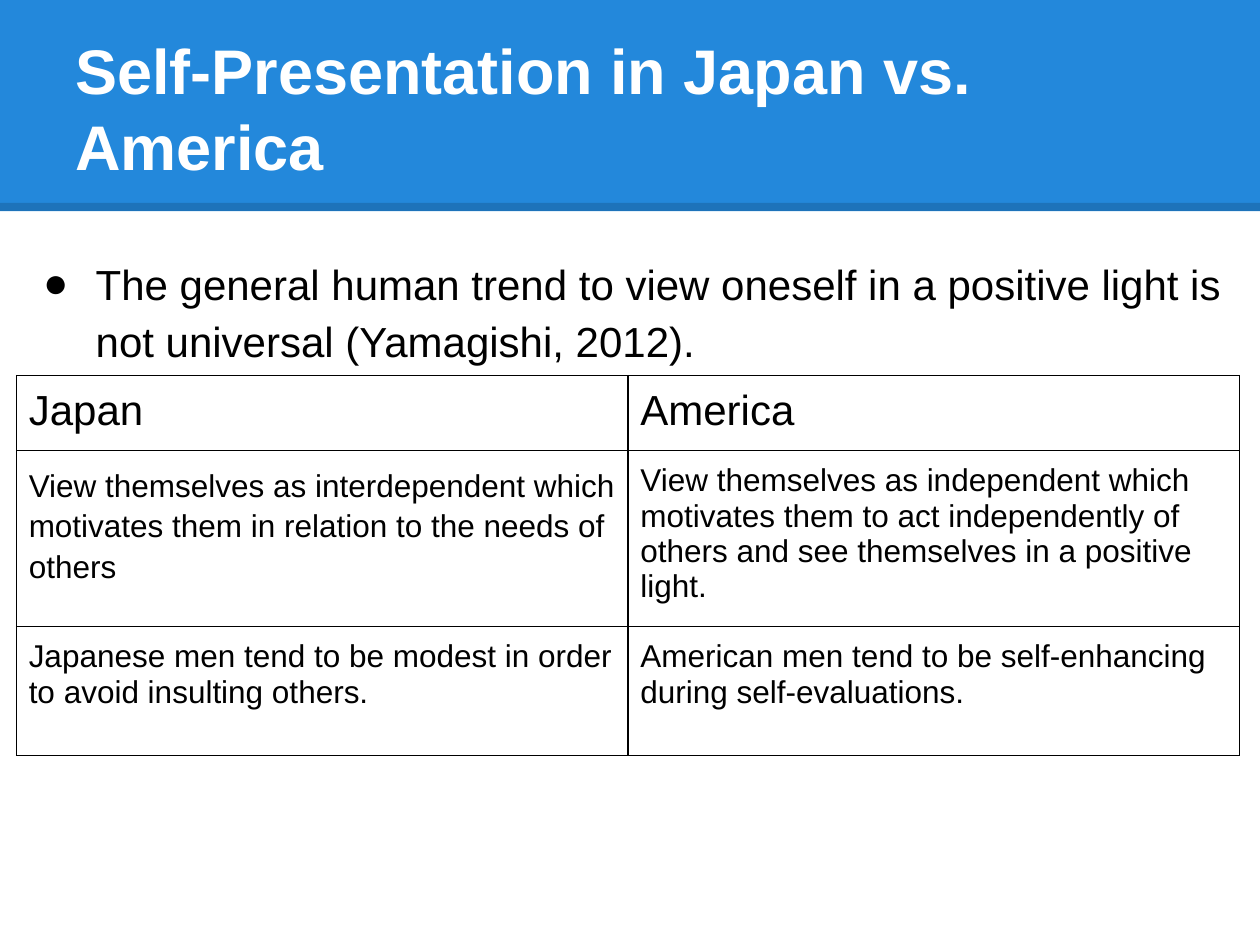
from lxml import etree
from pptx import Presentation
from pptx.dml.color import RGBColor
from pptx.enum.shapes import MSO_CONNECTOR, MSO_SHAPE
from pptx.enum.text import MSO_ANCHOR
from pptx.oxml.ns import qn
from pptx.util import Cm, Pt

RECTANGLE = MSO_SHAPE.RECTANGLE
STRAIGHT = MSO_CONNECTOR.STRAIGHT
TOP, BOTTOM = MSO_ANCHOR.TOP, MSO_ANCHOR.BOTTOM

COLOURS = {"banner": "2388DB", "title": "FFFFFF", "ink": "000000"}
SLIDE_WIDTH, SLIDE_HEIGHT = 25.4, 19.05
COMPARISON = [
    ("Japan", "America"),
    ("View themselves as interdependent which motivates them in relation "
     "to the needs of others",
     "View themselves as independent which motivates them to act "
     "independently of others and see themselves in a positive light."),
    ("Japanese men tend to be modest in order to avoid insulting others.",
     "American men tend to be self-enhancing during self-evaluations."),
]
ROW_HEIGHTS = [1.47, 3.35, 2.59]


def rgb(name):
    return RGBColor.from_string(COLOURS[name])


def add_colour(parent, name):
    solid = etree.SubElement(parent, qn("a:solidFill"))
    return etree.SubElement(solid, qn("a:srgbClr"), val=COLOURS[name])


class SlideBuilder:
    font = "Arial"
    inset = Cm(0.25)

    def __init__(self, slide):
        self.slide = slide

    def format_paragraph(self, paragraph, size, colour="ink", bold=False):
        for run in paragraph.runs:
            run.font.name = self.font
            run.font.size = Pt(size)
            run.font.bold = bold
            run.font.color.rgb = rgb(colour)

    def space_paragraph(self, paragraph):
        """Apply the loose spacing used for body copy."""
        paragraph.line_spacing = 1.15
        paragraph.space_before, paragraph.space_after = Pt(6), Pt(10)

    def band(self, left, top, width, height, colour):
        band = self.slide.shapes.add_shape(
            RECTANGLE, Cm(left), Cm(top), Cm(width), Cm(height))
        band.shadow.inherit = False
        band.fill.solid()
        band.fill.fore_color.rgb = rgb(colour)
        band.line.fill.background()

    def rule(self, top, width, weight, opacity):
        """Draw a translucent horizontal line from the left edge."""
        rule = self.slide.shapes.add_connector(
            STRAIGHT, 0, Cm(top), Cm(width), Cm(top))
        rule.line.width = Pt(weight)
        rule.line.color.rgb = rgb("ink")
        properties = rule._element.spPr
        colour = properties.find(".//" + qn("a:srgbClr"))
        etree.SubElement(colour, qn("a:alpha"), val=str(opacity * 1000))
        etree.SubElement(properties, qn("a:effectLst"))

    def text(self, left, top, width, height, wording, size, anchor=TOP, **style):
        box = self.slide.shapes.add_textbox(
            Cm(left), Cm(top), Cm(width), Cm(height))
        frame = box.text_frame
        frame.word_wrap = True
        frame.vertical_anchor = anchor
        frame.margin_left = frame.margin_right = self.inset
        frame.margin_top = frame.margin_bottom = self.inset
        frame.text = wording
        self.format_paragraph(frame.paragraphs[0], size, **style)
        return frame.paragraphs[0]

    def bullet(self, paragraph, symbol, indent, hanging):
        self.space_paragraph(paragraph)
        properties = paragraph._p.get_or_add_pPr()
        properties.set("marL", str(Cm(indent)))
        properties.set("indent", str(-Cm(hanging)))
        colour = etree.SubElement(properties, qn("a:buClr"))
        etree.SubElement(colour, qn("a:srgbClr"), val=COLOURS["ink"])
        etree.SubElement(properties, qn("a:buFont"), typeface=self.font)
        etree.SubElement(properties, qn("a:buChar"), char=symbol)

    def cell(self, cell, wording, size):
        cell.margin_left = cell.margin_right = self.inset
        cell.margin_top = cell.margin_bottom = self.inset
        cell.text = wording
        self.format_paragraph(cell.text_frame.paragraphs[0], size)
        properties = cell._tc.get_or_add_tcPr()
        for side in ("lnL", "lnR", "lnT", "lnB"):
            border = etree.SubElement(
                properties, qn(f"a:{side}"), w=str(Pt(0.75)))
            add_colour(border, "ink")
        cell.fill.background()

    def table(self, left, top, width, row_heights, rows):
        table = self.slide.shapes.add_table(
            len(rows), len(rows[0]), Cm(left), Cm(top),
            Cm(width), Cm(sum(row_heights))).table
        table.first_row = table.horz_banding = False
        for r, (height, wordings) in enumerate(zip(row_heights, rows)):
            table.rows[r].height = Cm(height)
            for c, wording in enumerate(wordings):
                self.cell(table.cell(r, c), wording, 18 if r else 24)
        return table


def main():
    presentation = Presentation()
    presentation.slide_width = Cm(SLIDE_WIDTH)
    presentation.slide_height = Cm(SLIDE_HEIGHT)
    builder = SlideBuilder(
        presentation.slides.add_slide(presentation.slide_layouts[6]))

    builder.band(0, 0, SLIDE_WIDTH, 4.26, "banner")
    builder.rule(4.17, SLIDE_WIDTH, weight=4.5, opacity=15)
    builder.text(1.27, 0.76, 22.86, 3.18,
                 "Self-Presentation in Japan vs. America", 36,
                 anchor=BOTTOM, colour="title", bold=True)
    trend = builder.text(
        0.41, 4.8, 24.51, 13.89,
        "The general human trend to view oneself in a positive light is "
        "not universal (Yamagishi, 2012).", 24)
    builder.bullet(trend, "●", indent=1.27, hanging=1.06)
    comparison = builder.table(0.33, 7.57, 24.66, ROW_HEIGHTS, COMPARISON)
    builder.space_paragraph(comparison.cell(1, 0).text_frame.paragraphs[0])

    presentation.save("out.pptx")


if __name__ == "__main__":
    main()
